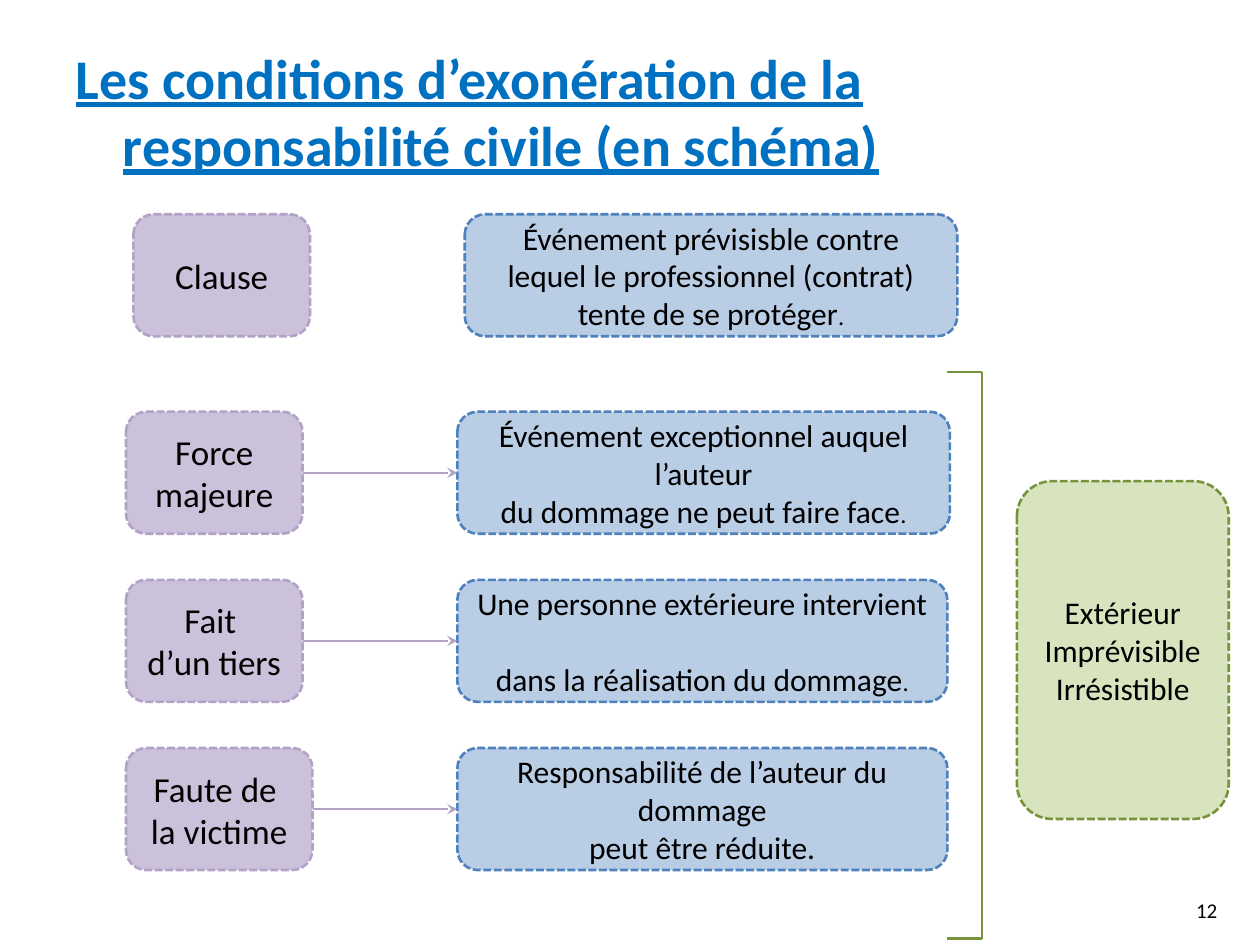
import pptx
import pptx.dml.color
import pptx.enum.dml
import pptx.enum.shapes
import pptx.enum.text
import pptx.oxml
import pptx.oxml.ns
import pptx.util
from lxml import etree
from pptx.util import Cm

# Content: "\n" is a line break inside a paragraph
TITLE = "Les conditions d’exonération de la responsabilité civile (en schéma)"
PAGE_NUMBER = "12"
CLAUSE = {
    "cause": ["Clause"],
    "meaning": ["Événement prévisisble contre lequel le professionnel (contrat) "
                "tente de se protéger"],
    "small_stop": True, "cause_width": 3.56, "meaning_width": 9.93,
}
CAUSES = [
    {"cause": ["Force majeure"],
     "meaning": ["Événement exceptionnel auquel l’auteur",
                 "du dommage ne peut faire face"],
     "small_stop": True, "cause_width": 3.56, "meaning_width": 9.93},
    {"cause": ["Fait \nd’un tiers"],
     "meaning": ["Une personne extérieure intervient \ndans la réalisation du dommage"],
     "small_stop": True, "cause_width": 3.56, "meaning_width": 9.88},
    {"cause": ["Faute de ", "la victime"],
     "meaning": ["Responsabilité de l’auteur du dommage", "peut être réduite."],
     "small_stop": False, "cause_width": 3.76, "meaning_width": 9.88},
]
CRITERIA = ["Extérieur", "Imprévisible", "Irrésistible"]

THEME = {
    "font": "Calibri", "text": "000000", "title": "0070C0",
    "cause": {"fill": "CCC1DA", "line": "B3A2C7", "size": 20},
    "meaning": {"fill": "B9CDE5", "line": "4F81BD", "size": 18},
    "criteria": {"fill": "D7E4BD", "line": "77933C", "size": 18},
    "title_size": 32, "number_size": 12, "stop_size": 14,
    "border": 1.5, "rule": 1.25,
}

# Layout, in centimetres
CAUSE_LEFT, MEANING_LEFT = 2.54, 9.22
CLAUSE_TOP, CLAUSE_SHIFT = 4.32, 0.15
CAUSES_TOP, ROW_PITCH, BOX_HEIGHT = 8.3, 3.39, 2.46
BRACKET = {"left": 19.1, "right": 19.79, "top": 7.5, "bottom": 18.92}


def color(value):
    return pptx.dml.color.RGBColor.from_string(value)


def style_font(font, size, **extra):
    values = {"name": THEME["font"], "size": pptx.util.Pt(size), **extra}
    for name, value in values.items():
        setattr(font, name, value)


def add_run(paragraph, text, size, text_color=THEME["text"], **extra):
    run = paragraph.add_run()
    run.text = text
    style_font(run.font, size, **extra)
    run.font.color.rgb = color(text_color)


def add_box(slide, left, top, width, height, kind, lines, small_stop=False):
    look = THEME[kind]
    shape = slide.shapes.add_shape(
        pptx.enum.shapes.MSO_SHAPE.ROUNDED_RECTANGLE,
        Cm(left), Cm(top), Cm(width), Cm(height))
    shape.shadow.inherit = False
    shape.fill.solid()
    shape.fill.fore_color.rgb = color(look["fill"])
    shape.line.color.rgb = color(look["line"])
    shape.line.width = pptx.util.Pt(THEME["border"])
    shape.line.dash_style = pptx.enum.dml.MSO_LINE.SQUARE_DOT
    frame = shape.text_frame
    frame.word_wrap = True
    frame.vertical_anchor = pptx.enum.text.MSO_ANCHOR.MIDDLE
    for index, line in enumerate(lines):
        paragraph = frame.add_paragraph() if index else frame.paragraphs[0]
        paragraph.alignment = pptx.enum.text.PP_ALIGN.CENTER
        for part_index, part in enumerate(line.split("\n")):
            if part_index:
                paragraph.add_line_break()
            add_run(paragraph, part, look["size"])
    if small_stop:
        add_run(paragraph, ".", THEME["stop_size"])
    return shape


def add_rule(slide, start, end, line_color):
    connector = slide.shapes.add_connector(
        pptx.enum.shapes.MSO_CONNECTOR.STRAIGHT,
        *(Cm(value) for value in start + end))
    connector.line.color.rgb = color(line_color)
    connector.line.width = pptx.util.Pt(THEME["rule"])
    properties = connector._element.spPr
    etree.SubElement(properties, pptx.oxml.ns.qn("a:effectLst"))
    return connector


def add_arrow(slide, source, target):
    arrow = add_rule(slide, (0, 0), (1, 0), THEME["cause"]["line"])
    arrow.begin_connect(source, 3)
    arrow.end_connect(target, 1)
    etree.SubElement(arrow.line._get_or_add_ln(),
                     pptx.oxml.ns.qn("a:tailEnd"), type="stealth")


def add_row(slide, row, top, shift=0):
    cause = add_box(slide, CAUSE_LEFT + shift, top, row["cause_width"],
                    BOX_HEIGHT, "cause", row["cause"])
    meaning = add_box(slide, MEANING_LEFT + shift, top, row["meaning_width"],
                      BOX_HEIGHT, "meaning", row["meaning"], row["small_stop"])
    return cause, meaning


def add_title(slide):
    title = slide.shapes.title
    place = {"left": 1.27, "top": 0.74, "width": 22.86, "height": 3.4}
    for name, value in place.items():
        setattr(title, name, Cm(value))
    frame = title.text_frame
    frame.word_wrap = True
    frame.auto_size = pptx.enum.text.MSO_AUTO_SIZE.NONE
    frame.vertical_anchor = pptx.enum.text.MSO_ANCHOR.TOP
    paragraph = frame.paragraphs[0]
    paragraph.alignment = pptx.enum.text.PP_ALIGN.LEFT
    # Hanging indent
    properties = paragraph._p.get_or_add_pPr()
    properties.set("marL", str(Cm(0.95)))
    properties.set("indent", str(-Cm(0.95)))
    add_run(paragraph, TITLE, THEME["title_size"], THEME["title"],
            bold=True, underline=True)


def add_page_number(slide):
    box = slide.shapes.add_textbox(Cm(18.87), Cm(17.83), Cm(5.92), Cm(1.02))
    box.text_frame.word_wrap = True
    box.text_frame.vertical_anchor = pptx.enum.text.MSO_ANCHOR.MIDDLE
    paragraph = box.text_frame.paragraphs[0]
    paragraph.alignment = pptx.enum.text.PP_ALIGN.RIGHT
    add_run(paragraph, PAGE_NUMBER, THEME["number_size"])


def main():
    presentation = pptx.Presentation()
    presentation.slide_width, presentation.slide_height = Cm(25.4), Cm(19.05)
    slide = presentation.slides.add_slide(presentation.slide_layouts[5])
    add_title(slide)
    add_page_number(slide)

    # Clause on its own, then the three causes with arrows
    add_row(slide, CLAUSE, CLAUSE_TOP, CLAUSE_SHIFT)
    for index, row in enumerate(CAUSES):
        cause, meaning = add_row(slide, row, CAUSES_TOP + index * ROW_PITCH)
        add_arrow(slide, cause, meaning)

    # Bracket and shared criteria
    left, right, top, bottom = (BRACKET[name] for name in
                                ("left", "right", "top", "bottom"))
    for start, end in [((left, top), (right, top)),
                       ((left, bottom), (right, bottom)),
                       ((right, top), (right, bottom))]:
        add_rule(slide, start, end, THEME["criteria"]["line"])
    add_box(slide, 20.5, 9.7, 4.27, 6.81, "criteria", CRITERIA)

    presentation.save("out.pptx")


if __name__ == "__main__":
    main()
